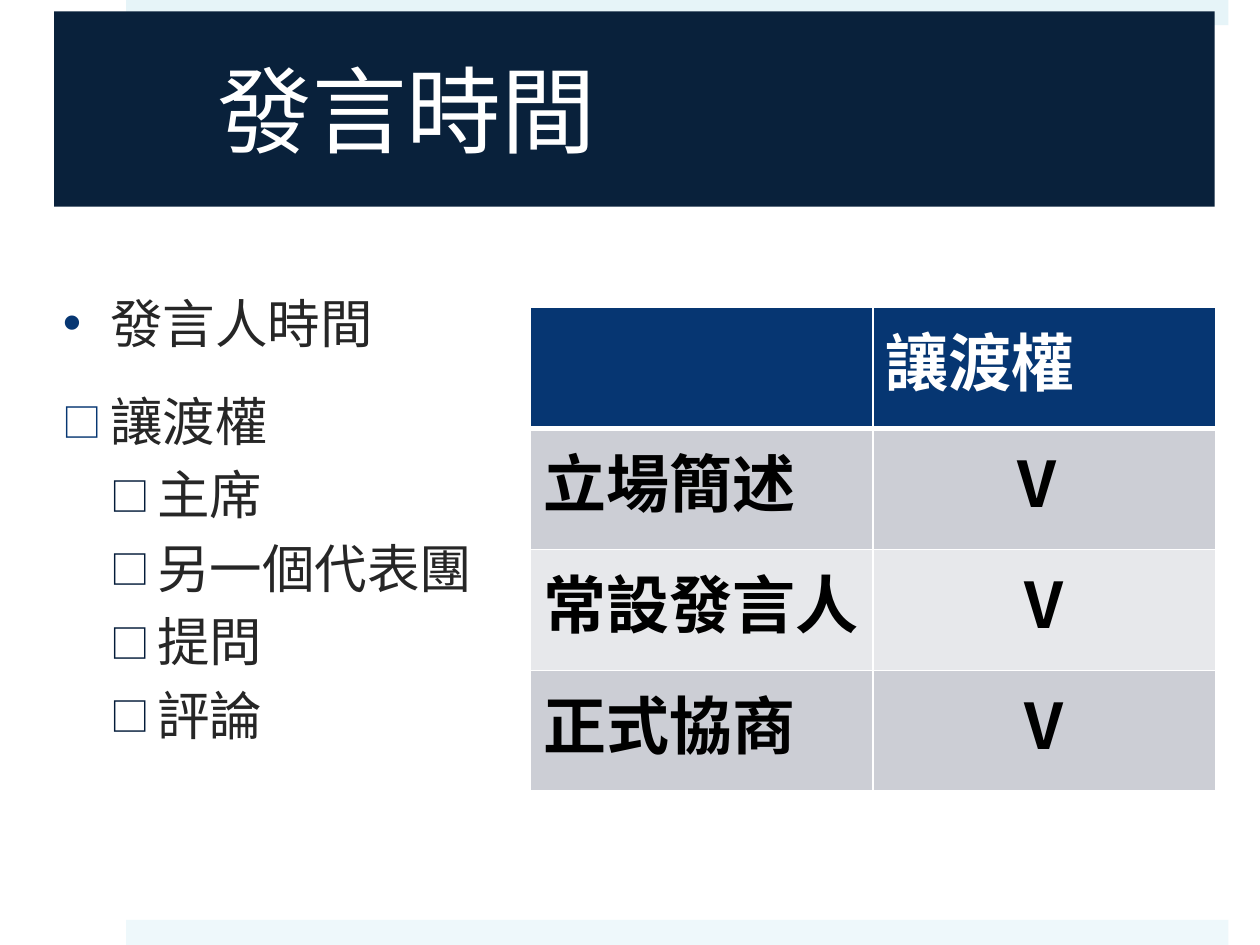
import pptx
import pptx.dml.color
import pptx.enum.shapes
import pptx.enum.text
import pptx.oxml
import pptx.oxml.ns
import pptx.util

FONT = "Noto Sans CJK SC"
COLORS = {
    "white": "FFFFFF", "black": "000000", "text": "262626",
    "top_bar": "E6F4F8", "bottom_bar": "EEF8FB", "title": "09213B",
    "header": "063672", "sub_bullet": "031B39",
    "odd_row": "CCCED5", "even_row": "E7E8EB",
}
MARKS = {"•": ("Arial", 100), "□": (FONT, 75)}
POINTS = [
    ("發言人時間", "•", 0), ("讓渡權", "□", 0),
    ("主席", "□", 1), ("另一個代表團", "□", 1), ("提問", "□", 1), ("評論", "□", 1),
]
ROWS = [("", "讓渡權"), ("立場簡述", "V "), ("常設發言人", "V"), ("正式協商", "V")]


def rgb(name):
    """Return the named colour."""
    return pptx.dml.color.RGBColor.from_string(COLORS[name])


def inches(*values):
    """Convert several lengths in inches."""
    return [pptx.util.Inches(v) for v in values]


def add_xml(parent, xml):
    """Append a DrawingML fragment to parent."""
    ns = pptx.oxml.ns.nsdecls("a")
    parent.append(pptx.oxml.parse_xml(xml.replace(">", f" {ns}>", 1)))


def write(p, text, size=30, color="text", bold=False, align=None):
    """Add one formatted run to a paragraph."""
    r = p.add_run()
    r.text = text
    r.font.size = pptx.util.Pt(size)
    r.font.bold = bold
    r.font.name = FONT
    r.font.color.rgb = rgb(color)
    add_xml(r.font._element, f'<a:ea typeface="{FONT}"></a:ea>')
    if align is not None:
        p.alignment = align


def add_bar(slide, top, color):
    """Add a pale bar behind everything else."""
    sp = slide.shapes.add_shape(
        pptx.enum.shapes.MSO_SHAPE.RECTANGLE, *inches(1, top, 8.75, 0.2))
    sp.shadow.inherit = False
    sp.fill.solid()
    sp.fill.fore_color.rgb = rgb(color)
    sp.line.fill.background()
    slide.shapes._spTree.insert(2, sp._element)


def set_title(slide, text):
    """Place and format the title band."""
    sp = slide.shapes.title
    sp.left, sp.top, sp.width, sp.height = inches(0.43, 0.09, 9.21, 1.55)
    sp.fill.solid()
    sp.fill.fore_color.rgb = rgb("title")
    tf = sp.text_frame
    tf.margin_left, tf.margin_right = inches(1.3, 0.3)
    tf.vertical_anchor = pptx.enum.text.MSO_ANCHOR.MIDDLE
    tf.auto_size = pptx.enum.text.MSO_AUTO_SIZE.NONE
    write(tf.paragraphs[0], text, size=54, color="white",
          align=pptx.enum.text.PP_ALIGN.LEFT)


def set_bullet(p, mark, level):
    """Give a paragraph its hanging indent and coloured bullet."""
    indent = pptx.util.Inches(0.375)
    pPr = p._p.get_or_add_pPr()
    pPr.set("marL", str(indent * (level + 1)))
    pPr.set("indent", str(-indent))
    color = COLORS["sub_bullet" if level else "header"]
    font, size = MARKS[mark]
    add_xml(pPr, f'<a:buClr><a:srgbClr val="{color}"/></a:buClr>')
    add_xml(pPr, f'<a:buSzPct val="{size * 1000}"></a:buSzPct>')
    add_xml(pPr, f'<a:buFont typeface="{font}"></a:buFont>')
    add_xml(pPr, f'<a:buChar char="{mark}"></a:buChar>')


def add_bullets(slide, points):
    """Add the two-level bullet list."""
    tf = slide.shapes.add_textbox(*inches(0.43, 2.26, 3.9, 4.03)).text_frame
    tf.word_wrap = True
    tf.margin_left = pptx.util.Inches(0.07)
    for i, (text, mark, level) in enumerate(points):
        p = tf.add_paragraph() if i else tf.paragraphs[0]
        p.level = level
        p.line_spacing = 1.0
        p.space_before = pptx.util.Pt(6 if level else 20)
        set_bullet(p, mark, level)
        write(p, text)


def set_borders(cell, bottom):
    """Give a cell white borders, with its own bottom width in points."""
    tcPr = cell._tc.get_or_add_tcPr()
    for side, width in zip("LRTB", (1, 1, 1, bottom)):
        add_xml(tcPr, f'<a:ln{side} w="{pptx.util.Pt(width)}"><a:solidFill>'
                f'<a:srgbClr val="{COLORS["white"]}"/></a:solidFill></a:ln{side}>')


def add_grid(slide, rows):
    """Add the table with a dark header and alternating rows."""
    tbl = slide.shapes.add_table(
        len(rows), len(rows[0]), *inches(4.21, 2.44, 5.44, 3.84)).table
    for i, row in enumerate(rows):
        fill = ("odd_row" if i % 2 else "even_row") if i else "header"
        for j, text in enumerate(row):
            cell = tbl.cell(i, j)
            set_borders(cell, bottom=1 if i else 3)
            cell.fill.solid()
            cell.fill.fore_color.rgb = rgb(fill)
            if text:
                center = pptx.enum.text.PP_ALIGN.CENTER if i and j else None
                write(cell.text_frame.paragraphs[0], text, size=36, bold=True,
                      color="black" if i else "white", align=center)


def main():
    """Build the slide and save it."""
    prs = pptx.Presentation()
    prs.slide_width, prs.slide_height = inches(10, 7.5)
    slide = prs.slides.add_slide(prs.slide_layouts[5])
    add_bar(slide, 0, "top_bar")
    add_bar(slide, 7.3, "bottom_bar")
    set_title(slide, "發言時間")
    add_bullets(slide, POINTS)
    add_grid(slide, ROWS)
    prs.save("out.pptx")


if __name__ == "__main__":
    main()
